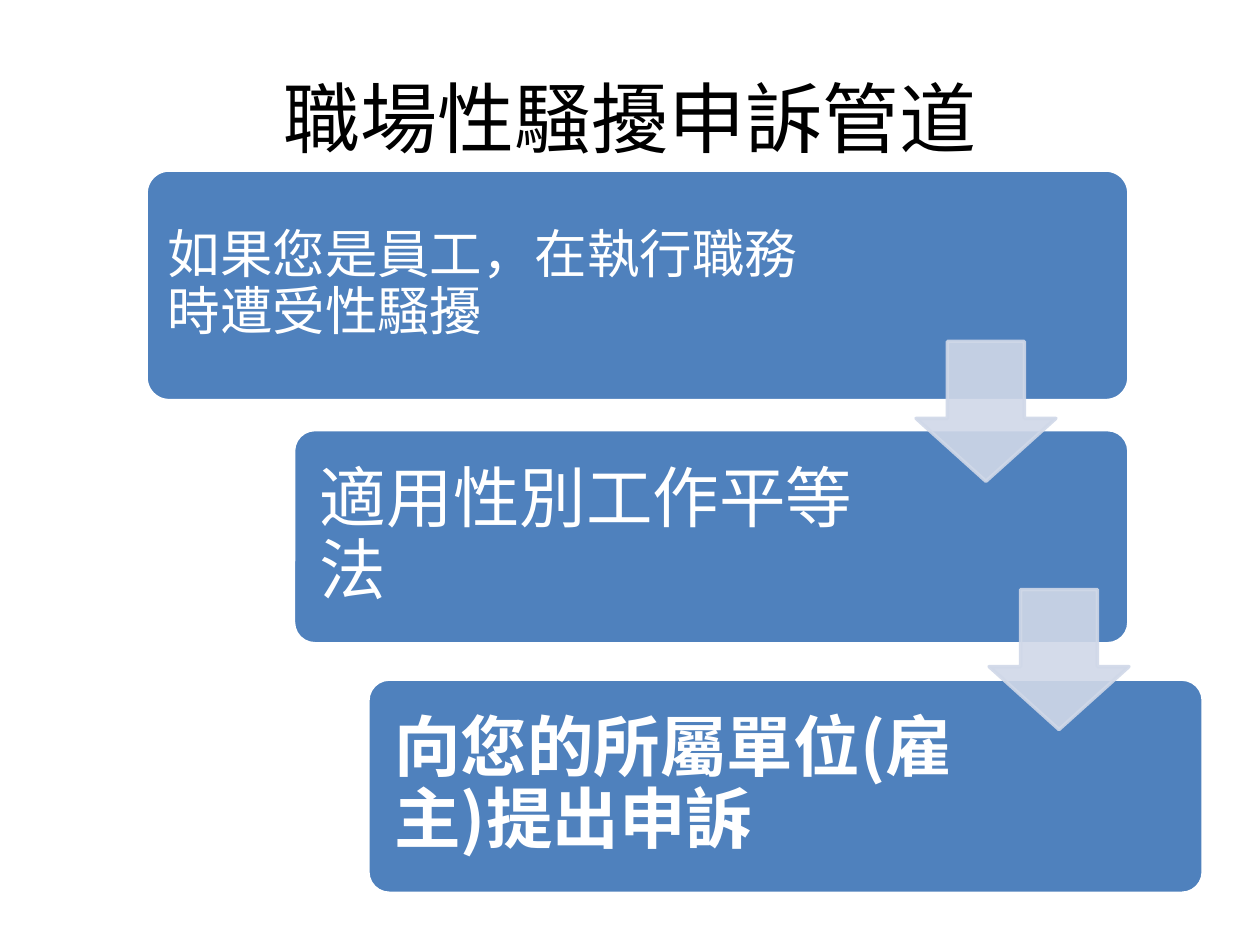
import pptx
import pptx.dml.color
import pptx.enum.shapes
import pptx.enum.text
import pptx.oxml
import pptx.oxml.ns
import pptx.util

THEME = {
    "font": "Noto Sans CJK SC",
    "title": "000000", "box": "4F81BD", "edge": "FFFFFF", "text": "FFFFFF", "arrow": "D0D8E8",
    "title_size": 44, "first_size": 30, "step_size": 38, "line": 2, "arrow_alpha": 90,
}
SHAPE = pptx.enum.shapes.MSO_SHAPE
ANCHOR = pptx.enum.text.MSO_ANCHOR
NS = pptx.oxml.ns.nsdecls("a")
inch = pptx.util.Inches


def write(tf, text, size, color, bold=False):
    """Fill a text frame with one paragraph, setting Latin and East Asian fonts."""
    tf.word_wrap = True
    tf.vertical_anchor = ANCHOR.MIDDLE
    p = tf.paragraphs[0]
    p.text = text
    p.font.size = pptx.util.Pt(size)
    p.font.bold = bold
    p.font.name = THEME["font"]
    p.font.color.rgb = pptx.dml.color.RGBColor.from_string(color)
    ea = pptx.oxml.parse_xml(f'<a:ea {NS} typeface="{THEME["font"]}"/>')
    p._p.pPr.find(pptx.oxml.ns.qn("a:defRPr")).append(ea)
    return p


def add_block(kind, box, adjustments, fill, line):
    s = slide.shapes.add_shape(kind, *map(inch, box))
    s.shadow.inherit = False
    for i, value in enumerate(adjustments):
        s.adjustments[i] = value
    s.fill.solid()
    s.fill.fore_color.rgb = pptx.dml.color.RGBColor.from_string(fill)
    s.line.color.rgb = pptx.dml.color.RGBColor.from_string(line)
    s.line.width = pptx.util.Pt(THEME["line"])
    return s


prs = pptx.Presentation()
prs.slide_width, prs.slide_height = inch(10), inch(7.5)
W, H = 10, 7.5
slide = prs.slides.add_slide(prs.slide_layouts[5])

title = slide.shapes.title
title.left, title.top = inch(0.05 * W), inch(0.04 * H)
title.width, title.height = inch(0.9 * W), inch(1.25)
p = write(title.text_frame, "職場性騷擾申訴管道", THEME["title_size"], THEME["title"])
p.alignment = pptx.enum.text.PP_ALIGN.CENTER

# Each step: text, left, top, width, height, text width, inset, size, bold
steps = [
    ("如果您是員工，在執行職務時遭受性騷擾", 1.16, 1.35, 7.8, 1.83, 5.65, 0.12, THEME["first_size"], False),
    ("適用性別工作平等法", 2.33, 3.41, 6.63, 1.7, 4.84, 0.16, THEME["step_size"], False),
    ("向您的所屬單位(雇主)提出申訴", 2.92, 5.39, 6.63, 1.7, 4.84, 0.16, THEME["step_size"], True),
]
pad = 0.05
for text, left, top, width, height, text_width, inset, size, bold in steps:
    add_block(SHAPE.ROUNDED_RECTANGLE, (left, top, width, height), [0.1], THEME["box"], THEME["edge"])
    label = slide.shapes.add_textbox(
        *map(inch, (left + pad, top + pad, text_width, height - 2 * pad)))
    tf = label.text_frame
    tf.margin_left = tf.margin_right = tf.margin_top = tf.margin_bottom = inch(inset)
    write(tf, text, size, THEME["text"], bold).line_spacing = 0.9

arrow_size = 1.11
for left, top in [(7.27, 2.71), (7.85, 4.68)]:
    arrow = add_block(SHAPE.DOWN_ARROW, (left, top, arrow_size, arrow_size), [0.45, 0.55],
                      THEME["arrow"], THEME["arrow"])
    # Adjustments are head length, then shaft width
    arrow.adjustments[0], arrow.adjustments[1] = 0.55, 0.45
    for color in arrow._element.spPr.iter(pptx.oxml.ns.qn("a:srgbClr")):
        color.append(pptx.oxml.parse_xml(f'<a:alpha {NS} val="{THEME["arrow_alpha"] * 1000}"/>'))

prs.save("out.pptx")
